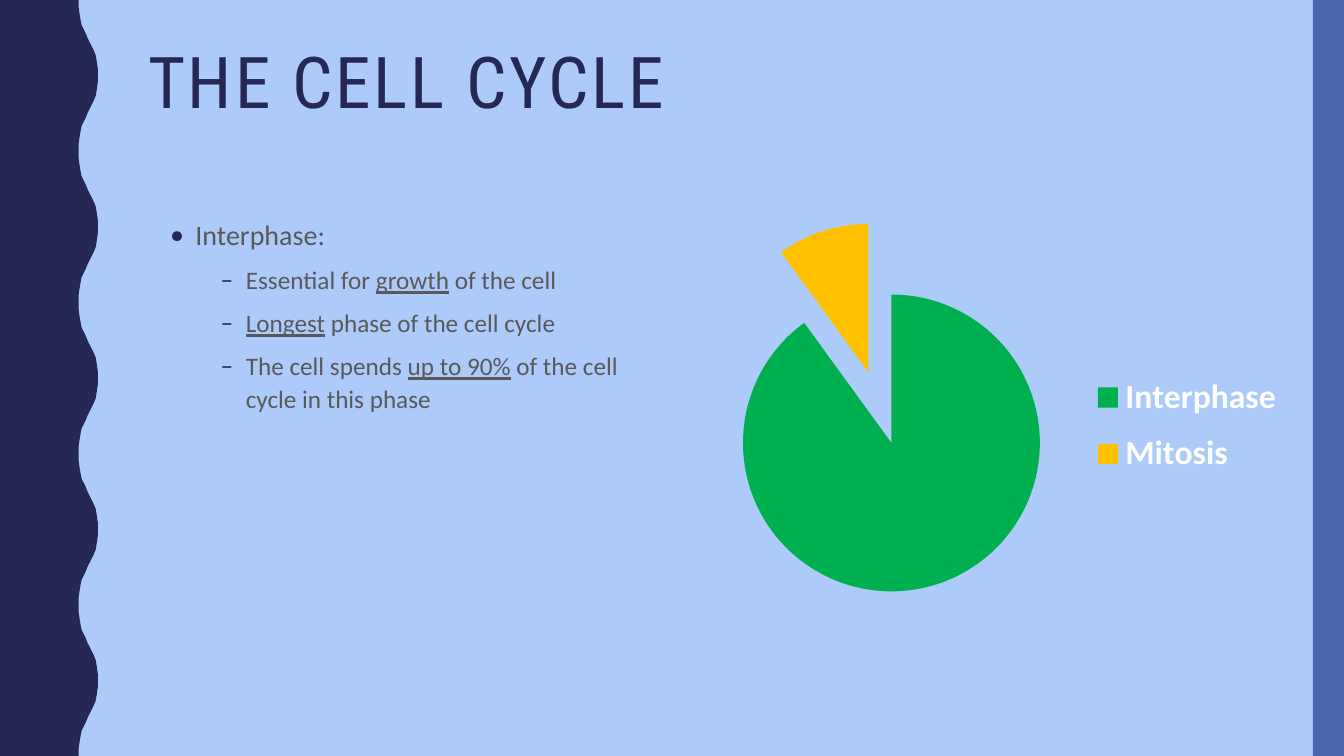
import pptx
import pptx.chart.data
import pptx.dml.color
import pptx.enum.chart
import pptx.enum.shapes
import pptx.enum.text
import pptx.oxml
import pptx.oxml.ns
import pptx.util

Inches = pptx.util.Inches
Pt = pptx.util.Pt

COLORS = {
    "background": "ACCBF9",
    "navy": "242852",
    "blue": "4A66AC",
    "body": "595959",
    "green": "00B050",
    "amber": "FFC000",
    "white": "FFFFFF",
    "black": "000000",
}
WIDTH, HEIGHT = 13.33, 7.5
WAVE_PERIOD = 1.5
HALF_WAVE = [
    (0.78, 0), (0.78, 0.07), (0.79, 0.14), (0.8, 0.2), (0.81, 0.25),
    (0.83, 0.29), (0.85, 0.33), (0.87, 0.38), (0.89, 0.42), (0.91, 0.46),
    (0.93, 0.5), (0.95, 0.55), (0.96, 0.61), (0.97, 0.68), (0.97, 0.75),
]
BODY = [
    (0, [("Interphase:", False)]),
    (1, [("Essential for ", False), ("growth", True), (" of the cell", False)]),
    (1, [("Longest", True), (" phase of the cell cycle", False)]),
    (1, [("The cell spends ", False), ("up to 90%", True),
         (" of the cell cycle in this phase", False)]),
]
LEVELS = [("•", 0.25, 20), ("–", 0.75, 18)]


def color(name):
    return pptx.dml.color.RGBColor.from_string(COLORS[name])


def wave_points():
    mirrored = [(x, WAVE_PERIOD - y) for x, y in reversed(HALF_WAVE[:-1])]
    period = HALF_WAVE + mirrored
    waves = round(HEIGHT / WAVE_PERIOD)
    edge = [(x, y + wave * WAVE_PERIOD) for wave in range(waves) for x, y in period]
    return [(0, 0)] + edge + [(0, HEIGHT)]


class SlideBuilder:
    heading_font = "Roboto Condensed"
    body_font = "Calibri"

    def __init__(self, deck):
        self.page = deck.slides.add_slide(deck.slide_layouts[6])
        self.page.background.fill.solid()
        self.page.background.fill.fore_color.rgb = color("background")

    def paint(self, shape, fill):
        shape.shadow.inherit = False
        shape.fill.solid()
        shape.fill.fore_color.rgb = color(fill)
        shape.line.fill.background()

    def outline(self, points, fill):
        start, *rest = [(Inches(x), Inches(y)) for x, y in points]
        builder = self.page.shapes.build_freeform(*start)
        builder.add_line_segments(rest, close=True)
        self.paint(builder.convert_to_shape(), fill)

    def rectangle(self, place, fill):
        kind = pptx.enum.shapes.MSO_SHAPE.RECTANGLE
        self.paint(self.page.shapes.add_shape(kind, *map(Inches, place)), fill)

    def text_frame(self, place):
        box = self.page.shapes.add_textbox(*map(Inches, place))
        box.text_frame.word_wrap = True
        box.text_frame.vertical_anchor = pptx.enum.text.MSO_ANCHOR.TOP
        return box.text_frame

    def add_run(self, para, text, size, font, fill):
        span = para.add_run()
        span.text = text
        span.font.size = Pt(size)
        span.font.name = font
        span.font.color.rgb = color(fill)
        return span

    def title(self, place, text):
        para = self.text_frame(place).paragraphs[0]
        para.line_spacing = 0.9
        span = self.add_run(para, text, 51, self.heading_font, "navy")
        span.font._element.set("spc", "200")

    def bullet(self, para, symbol, indent):
        properties = para._p.get_or_add_pPr()
        properties.set("marL", str(Inches(indent)))
        properties.set("indent", str(Inches(-0.25)))
        namespace = pptx.oxml.ns.nsdecls("a")
        for xml in (
            f'<a:buClr {namespace}><a:srgbClr val="{COLORS["navy"]}"/></a:buClr>',
            f'<a:buFont {namespace} typeface="{self.body_font}"/>',
            f'<a:buChar {namespace} char="{symbol}"/>',
        ):
            properties.append(pptx.oxml.parse_xml(xml))

    def bullet_list(self, place, items):
        frame = self.text_frame(place)
        for index, (level, runs) in enumerate(items):
            para = frame.add_paragraph() if index else frame.paragraphs[0]
            symbol, indent, size = LEVELS[level]
            para.level = level
            para.line_spacing = 1.1
            para.space_before = Pt(7)
            self.bullet(para, symbol, indent)
            for text, underlined in runs:
                span = self.add_run(para, text, size, self.body_font, "body")
                span.font.underline = underlined or None

    def chart_layout(self, x, y, width, height, inner=False):
        target = '<c:layoutTarget val="inner"/>' if inner else ""
        return pptx.oxml.parse_xml(
            f'<c:layout {pptx.oxml.ns.nsdecls("c")}><c:manualLayout>{target}'
            '<c:xMode val="edge"/><c:yMode val="edge"/>'
            f'<c:x val="{x}"/><c:y val="{y}"/><c:w val="{width}"/><c:h val="{height}"/>'
            "</c:manualLayout></c:layout>"
        )

    def pie(self, place, slices, explosion):
        data = pptx.chart.data.CategoryChartData()
        data.categories = [name for name, value, fill in slices]
        data.add_series("Series 1", [value for name, value, fill in slices])
        kind = pptx.enum.chart.XL_CHART_TYPE.PIE
        chart = self.page.shapes.add_chart(kind, *map(Inches, place), data).chart
        chart.has_title = False
        chart.font.size = Pt(18)
        chart.font.name = self.body_font
        chart.font.color.rgb = color("black")
        plot = chart.plots[0]
        plot.vary_by_categories = True
        series = plot.series[0]
        for index, (name, value, fill) in enumerate(slices):
            point = series.points[index].format
            point.fill.solid()
            point.fill.fore_color.rgb = color(fill)
            point.line.fill.background()
        series._element.find(pptx.oxml.ns.qn("c:dPt")).addprevious(
            pptx.oxml.parse_xml(
                f'<c:explosion {pptx.oxml.ns.nsdecls("c")} val="{explosion}"/>'))
        chart.has_legend = True
        legend = chart.legend
        legend.position = pptx.enum.chart.XL_LEGEND_POSITION.RIGHT
        legend.include_in_layout = False
        legend.font.size = Pt(24)
        legend.font.name = self.body_font
        legend.font.bold = True
        legend.font.color.rgb = color("white")
        layout_tag = pptx.oxml.ns.qn("c:layout")
        area = chart._chartSpace.chart.plotArea
        for old in area.findall(layout_tag) + legend._element.findall(layout_tag):
            old.getparent().remove(old)
        area.insert(0, self.chart_layout(0.09, 0.03, 0.52, 0.93, inner=True))
        legend._element.find(pptx.oxml.ns.qn("c:legendPos")).addnext(
            self.chart_layout(0.65, 0.38, 0.26, 0.32))


def main():
    deck = pptx.Presentation()
    deck.slide_width = Inches(WIDTH)
    deck.slide_height = Inches(HEIGHT)
    slide = SlideBuilder(deck)
    slide.outline(wave_points(), "navy")
    slide.rectangle((13.02, 0, 0.31, HEIGHT), "blue")
    slide.title((1.37, 0.42, 11.13, 1.63), "THE CELL CYCLE")
    slide.bullet_list((1.59, 2.08, 4.66, 4.12), BODY)
    slide.pie((6.25, 2.08, 7.08, 3.97),
              [("Interphase", 90, "green"), ("Mitosis", 10, "amber")], 25)
    deck.save("out.pptx")


if __name__ == "__main__":
    main()
